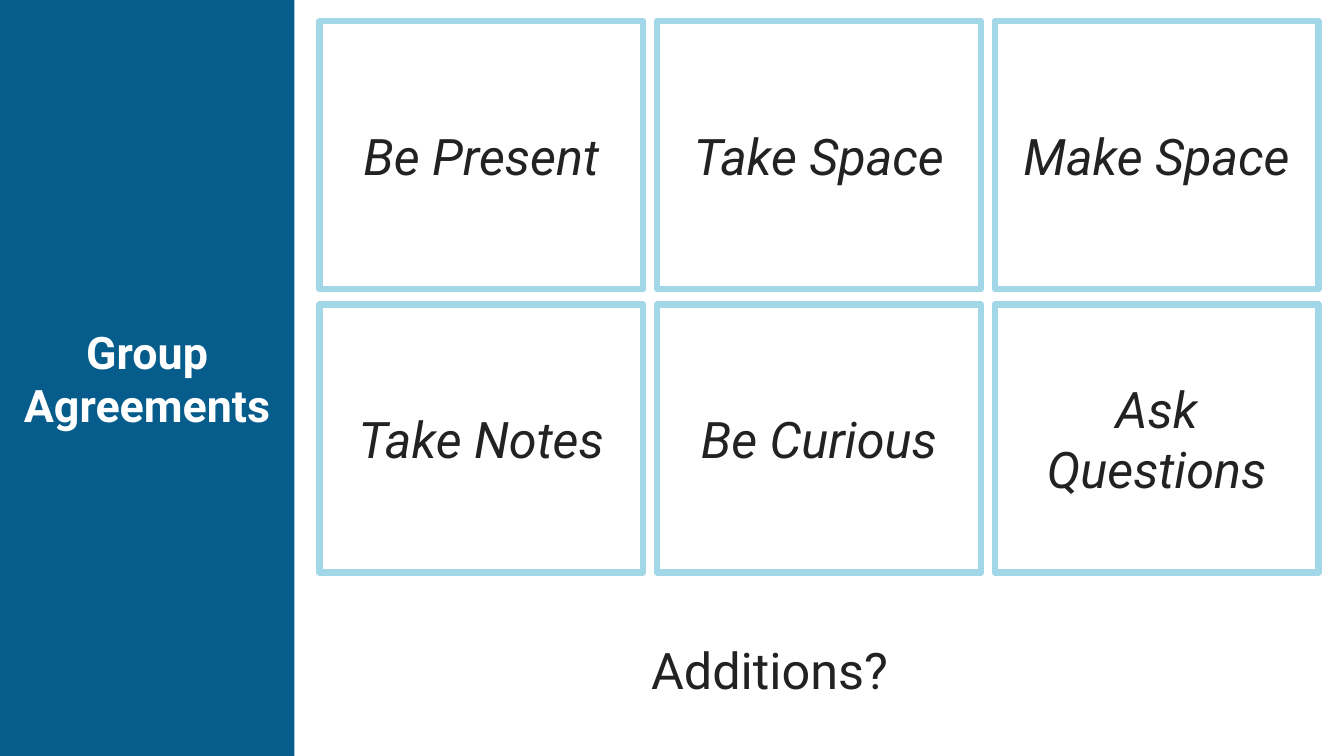
"""Build the Group Agreements slide."""
from pptx import Presentation
from pptx.dml.color import RGBColor
from pptx.enum.shapes import MSO_SHAPE
from pptx.enum.text import MSO_ANCHOR, MSO_AUTO_SIZE, PP_ALIGN
from pptx.util import Pt

TITLE = "Group Agreements"
AGREEMENTS = [
    ["Be Present", "Take Space", "Make Space"],
    ["Take Notes", "Be Curious", "Ask Questions"],
]
CLOSING = "Additions?"

FONT = "Roboto"
BLUE, LIGHT_BLUE, WHITE, INK = "065D8C", "A2D7E8", "FFFFFF", "222222"
SLIDE_WIDTH, SLIDE_HEIGHT = 960, 540
PANEL_WIDTH = 210.24
GRID_LEFT, GRID_TOP = 228.24, 15.12
CARD_WIDTH, CARD_HEIGHT = 231.12, 191.52
GAP_X, GAP_Y = 10.08, 10.8
CLOSING_BOX = (220.32, 435.6, 658.8, 84.96)


def color(value):
    return RGBColor.from_string(value)


def style(shape, text, fill, ink, size, bold=False, italic=False):
    shape.fill.solid()
    shape.fill.fore_color.rgb = color(fill)
    frame = shape.text_frame
    frame.text = text
    frame.word_wrap = True
    frame.auto_size = MSO_AUTO_SIZE.NONE
    frame.vertical_anchor = MSO_ANCHOR.MIDDLE
    paragraph = frame.paragraphs[0]
    paragraph.alignment = PP_ALIGN.CENTER
    font = paragraph.font
    font.name, font.size = FONT, Pt(size)
    font.bold, font.italic = bold, italic
    font.color.rgb = color(ink)


def add_box(slide, box, text, border=None, italic=False):
    shape = slide.shapes.add_shape(MSO_SHAPE.RECTANGLE, *map(Pt, box))
    shape.shadow.inherit = False
    if border:
        shape.line.color.rgb = color(border)
        shape.line.width = Pt(4.5)
    else:
        shape.line.fill.background()
    style(shape, text, WHITE, INK, 36, italic=italic)


def main():
    presentation = Presentation()
    presentation.slide_width = Pt(SLIDE_WIDTH)
    presentation.slide_height = Pt(SLIDE_HEIGHT)
    slide = presentation.slides.add_slide(presentation.slide_layouts[5])

    title = slide.shapes.title
    title.left, title.top = Pt(0), Pt(0)
    title.width, title.height = Pt(PANEL_WIDTH), Pt(SLIDE_HEIGHT)
    style(title, TITLE, BLUE, WHITE, 32, bold=True)

    for row, agreements in enumerate(AGREEMENTS):
        for column, agreement in enumerate(agreements):
            left = GRID_LEFT + column * (CARD_WIDTH + GAP_X)
            top = GRID_TOP + row * (CARD_HEIGHT + GAP_Y)
            card = (left, top, CARD_WIDTH, CARD_HEIGHT)
            add_box(slide, card, agreement, LIGHT_BLUE, italic=True)

    add_box(slide, CLOSING_BOX, CLOSING)
    presentation.save("out.pptx")


if __name__ == "__main__":
    main()
